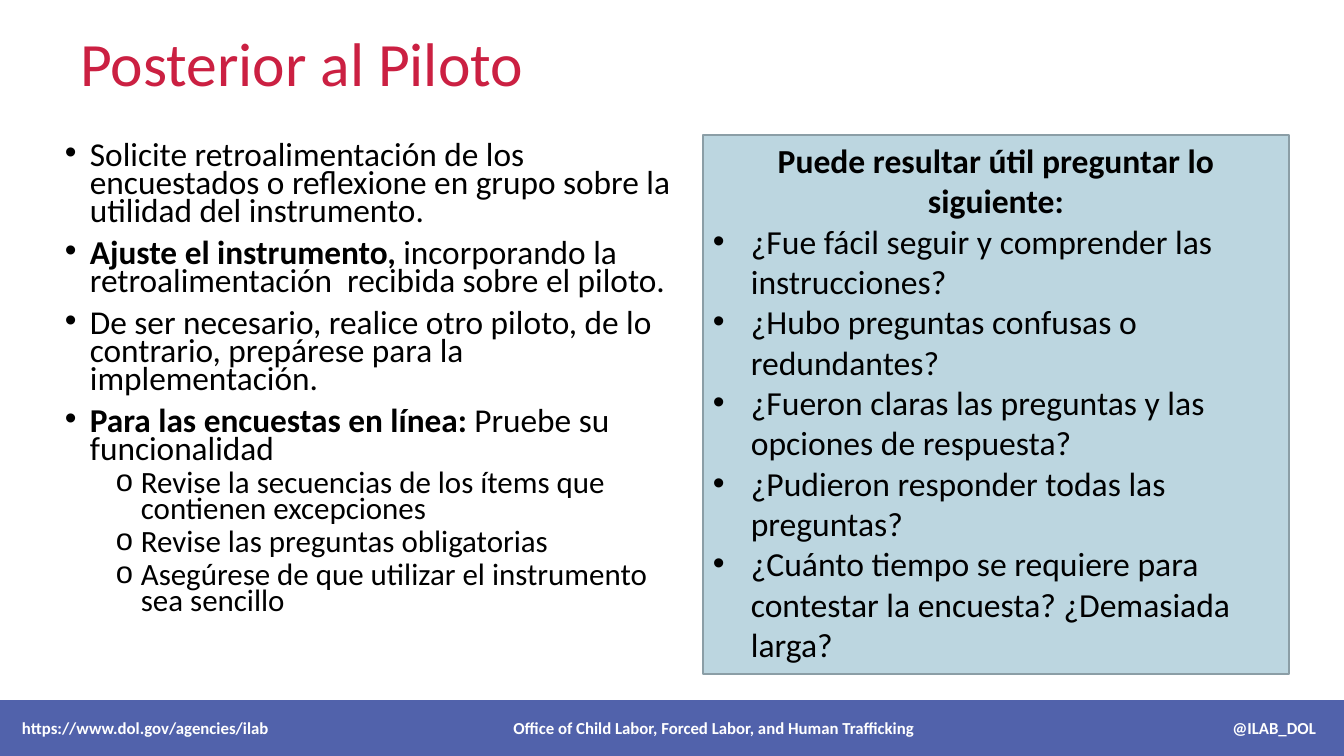
from dataclasses import dataclass

from lxml.etree import SubElement
from pptx import Presentation
from pptx.dml.color import RGBColor
from pptx.enum.shapes import MSO_SHAPE
from pptx.enum.text import MSO_ANCHOR, MSO_AUTO_SIZE, PP_ALIGN
from pptx.oxml.ns import qn
from pptx.util import Emu, Pt

EMU_PER_PX = 914400 / 100.8
FONT = "Calibri"
BLACK, WHITE, RED = "000000", "FFFFFF", "CB2042"
PALE_BLUE, GREY_BLUE, INDIGO = "BCD6E0", "8B9EA6", "3F51A2"


@dataclass
class Item:
    text: str
    lead: str = ""
    level: int = 0


STEPS = [
    Item("Solicite retroalimentación de los encuestados o reflexione en grupo "
         "sobre la utilidad del instrumento."),
    Item("incorporando la retroalimentación  recibida sobre el piloto.",
         lead="Ajuste el instrumento, "),
    Item("De ser necesario, realice otro piloto, de lo contrario, prepárese "
         "para la implementación."),
    Item("Pruebe su funcionalidad", lead="Para las encuestas en línea: "),
    Item("Revise la secuencias de los ítems que contienen excepciones", level=1),
    Item("Revise las preguntas obligatorias", level=1),
    Item("Asegúrese de que utilizar el instrumento sea sencillo", level=1),
]
QUESTIONS = [
    "¿Fue fácil seguir y comprender las instrucciones?",
    "¿Hubo preguntas confusas o redundantes?",
    "¿Fueron claras las preguntas y las opciones de respuesta?",
    "¿Pudieron responder todas las preguntas?",
    "¿Cuánto tiempo se requiere para contestar la encuesta? ¿Demasiada larga?",
]
FOOTER = [
    "https://www.dol.gov/agencies/ilab",
    "Office of Child Labor, Forced Labor, and Human Trafficking",
    "@ILAB_DOL",
]


def px(length: int) -> Emu:
    return Emu(round(length * EMU_PER_PX))


def color(value: str) -> RGBColor:
    return RGBColor.from_string(value)


def place(box, left: int, top: int, width: int, height: int) -> None:
    box.left, box.top, box.width, box.height = map(px, (left, top, width, height))


def add_span(para, text: str, *, size: float, ink: str = BLACK,
             bold: bool = False) -> None:
    span = para.add_run()
    span.text = text
    span.font.name = FONT
    span.font.size = Pt(size)
    span.font.bold = bold
    span.font.color.rgb = color(ink)


def next_para(frame):
    first = frame.paragraphs[0]
    return first if not first.runs else frame.add_paragraph()


def set_bullet(para, symbol: str, margin: int, hang: int) -> None:
    properties = para._p.get_or_add_pPr()
    properties.set("marL", str(px(margin)))
    properties.set("indent", str(-px(hang)))
    SubElement(properties, qn("a:buFont"), typeface="Arial")
    SubElement(properties, qn("a:buChar"), char=symbol)


def add_panel(page, bounds: tuple[int, int, int, int], fill: str):
    panel = page.shapes.add_shape(MSO_SHAPE.RECTANGLE, *map(px, bounds))
    panel.shadow.inherit = False
    panel.fill.solid()
    panel.fill.fore_color.rgb = color(fill)
    panel.text_frame.word_wrap = True
    return panel


def add_title(page) -> None:
    title = page.shapes.title
    place(title, 70, 22, 1017, 89)
    frame = title.text_frame
    frame.auto_size = MSO_AUTO_SIZE.NONE
    frame.vertical_anchor = MSO_ANCHOR.MIDDLE
    para = frame.paragraphs[0]
    para.alignment = PP_ALIGN.LEFT
    para.line_spacing = 0.9
    add_span(para, "Posterior al Piloto", size=44, ink=RED)


def add_steps(page) -> None:
    frame = page.shapes.add_textbox(*map(px, (55, 139, 638, 527))).text_frame
    frame.word_wrap = True
    for item in STEPS:
        para = next_para(frame)
        para.level = item.level
        para.line_spacing = 0.7
        para.space_before = Pt(5 if item.level else 10)
        size = 22.1 if item.level else 23.8
        if item.lead:
            add_span(para, item.lead, size=size, bold=True)
        add_span(para, item.text, size=size)
        set_bullet(para, "o" if item.level else "•", 25 + 51 * item.level, 25)


def add_questions(page) -> None:
    panel = add_panel(page, (703, 135, 586, 539), PALE_BLUE)
    panel.line.color.rgb = color(GREY_BLUE)
    panel.line.width = Pt(1)
    frame = panel.text_frame
    frame.vertical_anchor = MSO_ANCHOR.TOP
    heading = next_para(frame)
    heading.alignment = PP_ALIGN.CENTER
    add_span(heading, "Puede resultar útil preguntar lo siguiente:", size=24, bold=True)
    for question in QUESTIONS:
        para = next_para(frame)
        para.alignment = PP_ALIGN.LEFT
        add_span(para, question, size=24)
        set_bullet(para, "•", 38, 38)


def add_footer(page) -> None:
    bar = add_panel(page, (0, 700, 1348, 56), INDIGO)
    bar.line.fill.background()
    fill_color = bar.fill._xPr.find(qn("a:solidFill"))[0]
    SubElement(fill_color, qn("a:alpha"), val="90000")
    frame = bar.text_frame
    frame.vertical_anchor = MSO_ANCHOR.MIDDLE
    frame.margin_left = px(22)
    para = frame.paragraphs[0]
    para.alignment = PP_ALIGN.LEFT
    add_span(para, "\t".join(FOOTER), size=12, ink=WHITE, bold=True)
    # Tab stops centre the office name and push the handle to the right
    stops = SubElement(para._p.get_or_add_pPr(), qn("a:tabLst"))
    for position, align in ((692, "ctr"), (1294, "r")):
        SubElement(stops, qn("a:tab"), pos=str(px(position)), algn=align)


def main() -> None:
    deck = Presentation()
    deck.slide_width, deck.slide_height = px(1344), px(756)
    page = deck.slides.add_slide(deck.slide_layouts.get_by_name("Title Only"))
    add_title(page)
    add_steps(page)
    add_questions(page)
    add_footer(page)
    deck.save("out.pptx")


if __name__ == "__main__":
    main()
